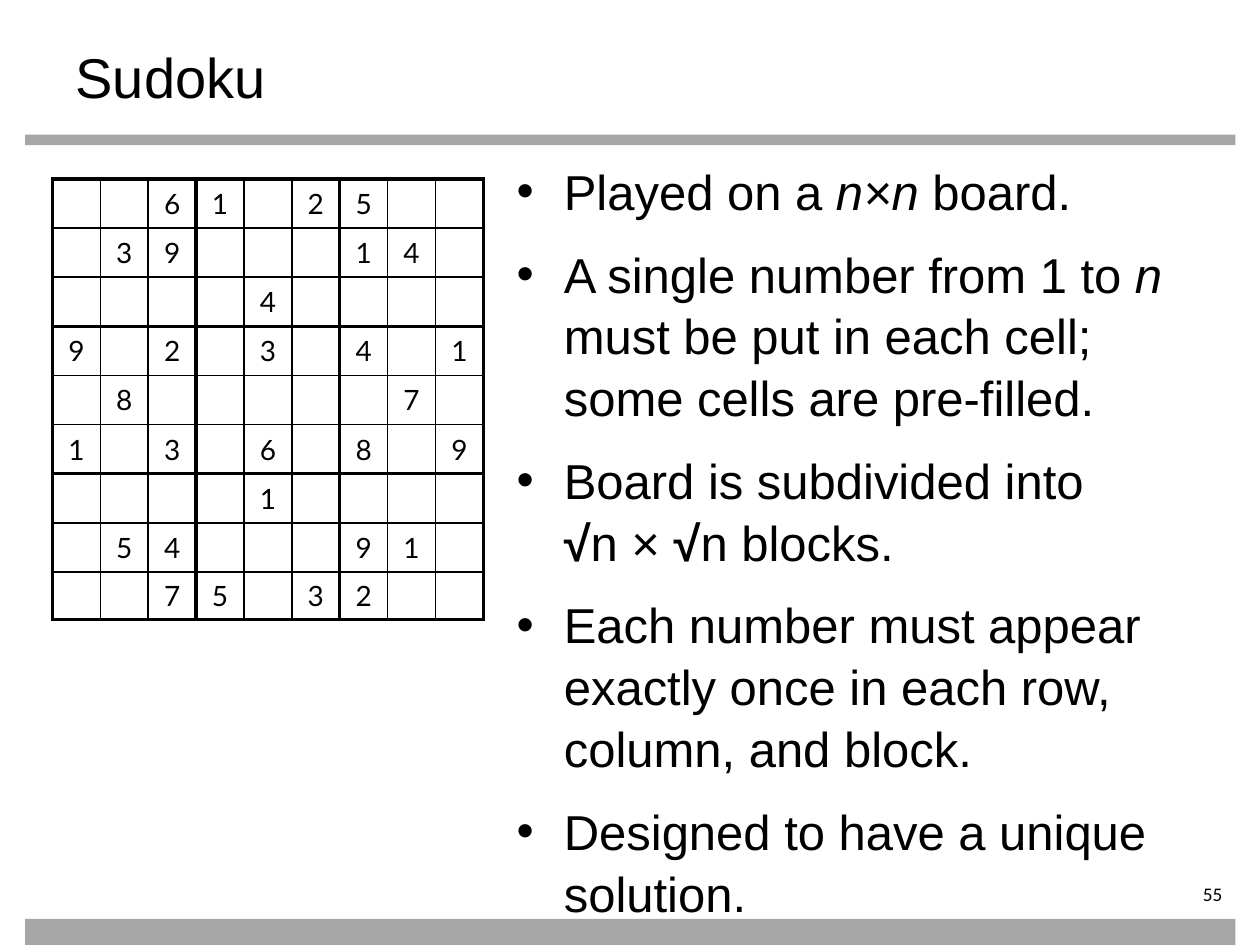
from lxml import etree
from pptx import Presentation
from pptx import util as u
from pptx.dml.color import RGBColor
from pptx.enum import shapes, text
from pptx.oxml import ns

Pt = u.Pt
BLACK = RGBColor(0x00, 0x00, 0x00)
GREY = RGBColor(0xA6, 0xA6, 0xA6)

BOARD = [
    "..61.25..",
    ".39...14.",
    "....4....",
    "9.2.3.4.1",
    ".8.....7.",
    "1.3.6.8.9",
    "....1....",
    ".54...91.",
    "..75.32..",
]
SIZE, BLOCK = 9, 3
THIN, THICK = 1, 2.25

# Each rule is a list of (words, font extras); a line break is "\v"
RULES = [
    [("Played on a ", {}), ("n×n", {"italic": True}), (" board.", {})],
    [("A single number from 1 to ", {}), ("n", {"italic": True}),
     (" must be put in each cell; some cells are pre-filled.", {})],
    [("Board is subdivided into", {}), ("\v", {}), ("√", {"bold": True}),
     ("n × ", {}), ("√", {"bold": True}), ("n blocks.", {})],
    [("Each number must appear exactly once in each row, column, and block.", {})],
    [("Designed to have a unique solution.", {})],
]


def add_span(para, words, name, size, **extras):
    span = para.add_run()
    span.text = words
    span.font.color.rgb = BLACK
    for key, value in {"name": name, "size": Pt(size), **extras}.items():
        setattr(span.font, key, value)


def add_border(cell, side, width):
    line = etree.SubElement(cell._tc.get_or_add_tcPr(), ns.qn("a:ln" + side),
                            w=str(Pt(width)))
    fill = etree.SubElement(line, ns.qn("a:solidFill"))
    etree.SubElement(fill, ns.qn("a:srgbClr"), val=str(BLACK))


deck = Presentation()
deck.slide_width, deck.slide_height = Pt(720), Pt(540)
page = deck.slides.add_slide(deck.slide_layouts[1])
title, body = page.placeholders

# Grey bars under the title and at the foot
for top, height in [(77, 6), (525, 15)]:
    bar = page.shapes.add_shape(shapes.MSO_SHAPE.RECTANGLE,
                                Pt(14.4), Pt(top), Pt(691.6), Pt(height))
    bar.shadow.inherit = False
    bar.fill.solid()
    bar.fill.fore_color.rgb = GREY
    bar.line.fill.background()

# Text frames: title, rules and page number
number = page.shapes.add_textbox(0, 0, 0, 0)
frames = [
    (title, (36, 16.5, 648, 66), {"margin_top": Pt(8)}),
    (body, (288, 87, 396, 438), {}),
    (number, (626.4, 504, 79.2, 16),
     {"margin_left": 0, "margin_top": 0, "margin_bottom": 0}),
]
for box, (left, top, width, height), extras in frames:
    place = {"left": left, "top": top, "width": width, "height": height}
    for key, value in place.items():
        setattr(box, key, Pt(value))
    look = {"word_wrap": True, "auto_size": text.MSO_AUTO_SIZE.NONE,
            "vertical_anchor": text.MSO_ANCHOR.TOP, **extras}
    for key, value in look.items():
        setattr(box.text_frame, key, value)

para = title.text_frame.paragraphs[0]
para.alignment = text.PP_ALIGN.LEFT
add_span(para, "Sudoku", "Arial", 32)

para = number.text_frame.paragraphs[0]
para.alignment = text.PP_ALIGN.RIGHT
add_span(para, "55", "Calibri", 11)

# Bulleted rules
for index, rule in enumerate(RULES):
    frame = body.text_frame
    para = frame.add_paragraph() if index else frame.paragraphs[0]
    props = para._p.get_or_add_pPr()
    props.set("marL", str(Pt(27)))
    props.set("indent", str(Pt(-27)))
    etree.SubElement(props, ns.qn("a:buChar"), char="•")
    para.line_spacing = 1.05
    para.space_before = Pt(12 if index else 0)
    for words, extras in rule:
        if words == "\v":
            para.add_line_break()
        else:
            add_span(para, words, "Arial", 28, **extras)

# Sudoku board, with thick lines around each block
grid = page.shapes.add_table(SIZE, SIZE, Pt(30), Pt(102.2), Pt(246.24), Pt(252)).table
grid.first_row = grid.horz_banding = False
for column in grid.columns:
    column.width = Pt(27.36)
for r, digits in enumerate(BOARD):
    grid.rows[r].height = Pt(28.1 if r < SIZE - 1 else 27)
    for c, digit in enumerate(digits):
        cell = grid.cell(r, c)
        look = {"margin_left": Pt(8), "margin_right": Pt(8),
                "margin_top": Pt(2), "margin_bottom": Pt(2),
                "vertical_anchor": text.MSO_ANCHOR.MIDDLE}
        for key, value in look.items():
            setattr(cell, key, value)
        for side, edge in [("L", c), ("R", c + 1), ("T", r), ("B", r + 1)]:
            add_border(cell, side, THIN if edge % BLOCK else THICK)
        cell.fill.background()
        if digit != ".":
            para = cell.text_frame.paragraphs[0]
            para.alignment = text.PP_ALIGN.CENTER
            add_span(para, digit, "Lato", 16)

deck.save("out.pptx")
